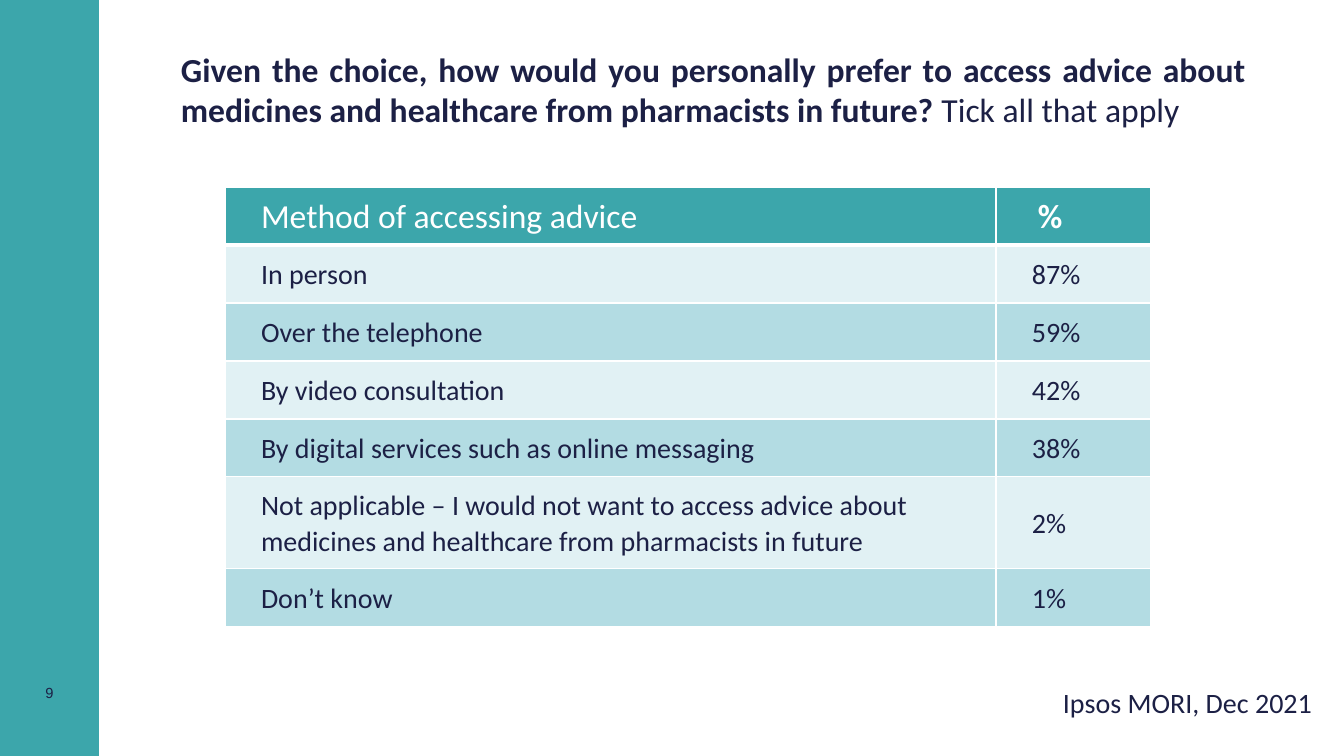
from lxml import etree
from pptx import Presentation, util as u
from pptx.dml.color import RGBColor
from pptx.enum import shapes, text
from pptx.oxml.ns import qn

PX = 914400 / 100.8
TEAL, NAVY, WHITE = "3CA6AB", "1C2045", "FFFFFF"
BANDS = ["E1F1F4", "B3DCE3"]
ROWS = [
    ("Method of accessing advice", "%"),
    ("In person", "87%"),
    ("Over the telephone", "59%"),
    ("By video consultation", "42%"),
    ("By digital services such as online messaging", "38%"),
    ("Not applicable – I would not want to access advice about medicines "
     "and healthcare from pharmacists in future", "2%"),
    ("Don’t know", "1%"),
]


def px(*vals):
    """Turn pixel lengths into a list of EMU."""
    return [u.Emu(round(v * PX)) for v in vals]


def write(frame, words, size=20, bold=False, color=NAVY, font="Calibri",
          align=text.PP_ALIGN.LEFT, space=1.0):
    """Add a run to the first paragraph of a text frame."""
    frame.word_wrap = True
    para = frame.paragraphs[0]
    para.alignment, para.line_spacing = align, space
    run = para.add_run()
    run.text = words
    run.font.size, run.font.bold, run.font.name = u.Pt(size), bold, font
    run.font.color.rgb = RGBColor.from_string(color)


prs = Presentation()
prs.slide_width, prs.slide_height = px(1344, 756)
slide = prs.slides.add_slide(prs.slide_layouts[6])

# Side band and page number
band = slide.shapes.add_shape(shapes.MSO_SHAPE.RECTANGLE, *px(0, 0, 99, 756))
band.shadow.inherit = False
band.fill.solid()
band.fill.fore_color.rgb = RGBColor.from_string(TEAL)
band.line.fill.background()
page = slide.shapes.add_textbox(*px(-1, 679, 101, 29))
write(page.text_frame, "9", size=10.5, font="Arial", align=text.PP_ALIGN.CENTER)

# Answers table
table = slide.shapes.add_table(len(ROWS), 2, *px(225, 187, 926, 440)).table
for col, width in zip(table.columns, px(771, 155)):
    col.width = width
for row, height in zip(table.rows, px(58, 58, 58, 58, 58, 92, 58)):
    row.height = height

for r, row in enumerate(ROWS):
    head = r == 0
    for c, words in enumerate(row):
        cell = table.cell(r, c)
        cell.vertical_anchor = text.MSO_ANCHOR.MIDDLE
        left = 42 if head and c == 1 else 36
        (cell.margin_left, cell.margin_right,
         cell.margin_top, cell.margin_bottom) = px(left, 16, 0, 0)
        props = cell._tc.get_or_add_tcPr()
        for side in "LRTB":
            thick = 3 if head and side == "B" else 1
            line = etree.SubElement(props, qn(f"a:ln{side}"), w=str(u.Pt(thick)))
            fill = etree.SubElement(line, qn("a:solidFill"))
            etree.SubElement(fill, qn("a:srgbClr"), val=WHITE)
        cell.fill.solid()
        tint = TEAL if head else BANDS[(r - 1) % 2]
        cell.fill.fore_color.rgb = RGBColor.from_string(tint)
        write(cell.text_frame, words, size=24 if head else 20,
              bold=head and c == 1, color=WHITE if head else NAVY, space=1.07)

# Question and source
title = slide.shapes.add_textbox(*px(171, 44, 1085, 122)).text_frame
write(title, "Given the choice, how would you personally prefer to access advice "
      "about medicines and healthcare from pharmacists in future? ",
      size=24, bold=True, align=text.PP_ALIGN.JUSTIFY)
write(title, "Tick all that apply", size=24, align=text.PP_ALIGN.JUSTIFY)
source = slide.shapes.add_textbox(*px(1053, 681, 293, 75))
write(source.text_frame, "Ipsos MORI, Dec 2021")

prs.save("out.pptx")
